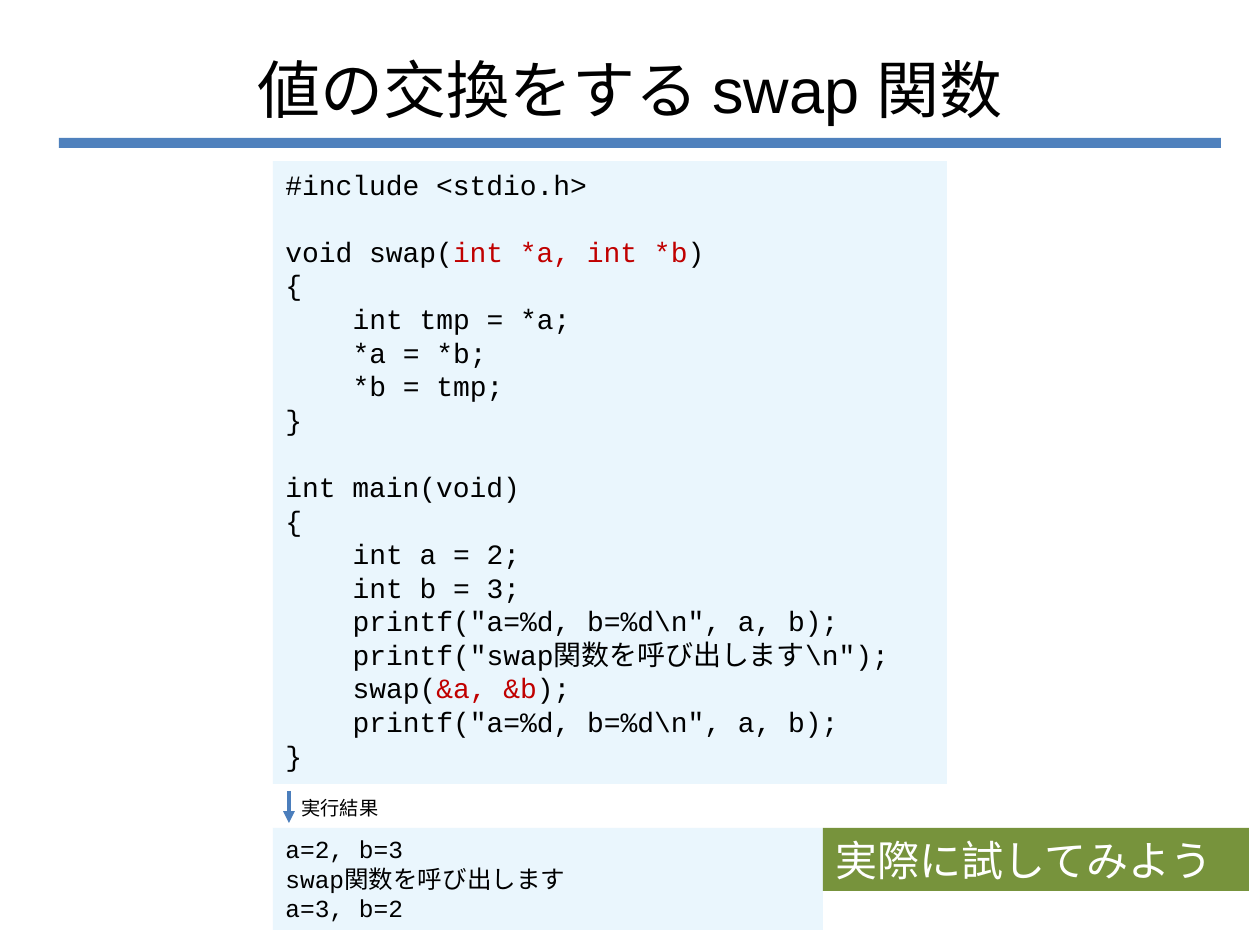
from lxml.etree import SubElement
from pptx import Presentation
from pptx.dml.color import RGBColor as RGB
from pptx.enum.shapes import MSO_CONNECTOR as Link, MSO_SHAPE as Shape
from pptx.enum.text import MSO_ANCHOR as Anchor, PP_ALIGN as Align
from pptx.oxml.ns import qn
from pptx.util import Pt

SCALE = 914400 / 126
COLORS = {"bar": "4F81BD", "code": "EAF6FD", "arrow": "4B7EBC", "note": "77933C",
          "black": "000000", "red": "C00000", "white": "FFFFFF"}

CODE = r"""#include <stdio.h>

void swap(|int *a, int *b|)
{
    int tmp = *a;
    *a = *b;
    *b = tmp;
}

int main(void)
{
    int a = 2;
    int b = 3;
    printf("a=%d, b=%d\n", a, b);
    printf("swap関数を呼び出します\n");
    swap(|&a, &b|);
    printf("a=%d, b=%d\n", a, b);
}"""

RESULT = """a=2, b=3
swap関数を呼び出します
a=3, b=2"""


def emu(*px):
    """Turn px lengths into EMU."""
    return [round(p * SCALE) for p in px]


def color(name):
    """Look up a named colour."""
    return RGB.from_string(COLORS[name])


class Deck:
    """Hold the style and the current slide."""

    def __init__(self, wide, high):
        """Start a deck with one blank slide."""
        self.prs = Presentation()
        self.prs.slide_width, self.prs.slide_height = emu(wide, high)
        self.slide = self.prs.slides.add_slide(self.prs.slide_layouts[6])
        self.sans, self.mono = "Arial", "Courier New"

    def bar(self, box, fill):
        """Draw a plain filled bar."""
        bar = self.slide.shapes.add_shape(Shape.RECTANGLE, *emu(*box))
        bar.shadow.inherit = False
        bar.fill.solid()
        bar.fill.fore_color.rgb = color(fill)
        bar.line.fill.background()

    def text(self, box, text, size, face, ink="black", fill=None,
             align=Align.LEFT, anchor=Anchor.TOP, wrap=True):
        """Write lines, with blank lines as spacing and |marked| parts in red."""
        shape = self.slide.shapes.add_textbox(*emu(*box))
        if fill:
            shape.fill.solid()
            shape.fill.fore_color.rgb = color(fill)
        frame = shape.text_frame
        frame.word_wrap, frame.vertical_anchor = wrap, anchor
        para, gap = None, 0
        for line in text.split("\n"):
            if not line:
                gap += size * 1.2
                continue
            para = frame.add_paragraph() if para else frame.paragraphs[0]
            para.alignment, para.space_before = align, Pt(gap)
            para.font.size, para.font.name = Pt(size), face
            gap, body = 0, line.lstrip()
            indent = Pt((len(line) - len(body)) * size * 0.6)
            if indent:
                para._p.get_or_add_pPr().set("marL", str(indent))
            for spot, part in enumerate(body.split("|")):
                run = para.add_run()
                run.text = part
                run.font.color.rgb = color("red" if spot % 2 else ink)

    def arrow(self, ends, ink, width):
        """Draw a line with a triangle head at its end."""
        line = self.slide.shapes.add_connector(Link.STRAIGHT, *emu(*ends))
        line.line.color.rgb = color(ink)
        line.line.width = Pt(width)
        SubElement(line.line._get_or_add_ln(), qn("a:tailEnd"), type="triangle")
        SubElement(line._element.spPr, qn("a:effectLst"))

    def save(self):
        """Write the deck."""
        self.prs.save("out.pptx")


def main():
    """Build the swap slide."""
    deck = Deck(1260, 945)
    deck.bar((59, 138, 1162, 10), "bar")
    deck.text((63, 38, 1134, 100), "値の交換をする swap 関数", 36, deck.sans,
              align=Align.CENTER, anchor=Anchor.MIDDLE)
    deck.text((273, 161, 674, 623), CODE, 16, deck.mono, fill="code")
    deck.text((273, 828, 550, 102), RESULT, 14, deck.mono, fill="code")
    deck.arrow((289, 791, 289, 823), "arrow", 2.25)
    deck.text((289, 790, 103, 36), "実行結果", 11, deck.sans, wrap=False)
    deck.text((823, 828, 426, 63), "実際に試してみよう", 24, deck.mono,
              ink="white", fill="note")
    deck.save()


if __name__ == "__main__":
    main()
